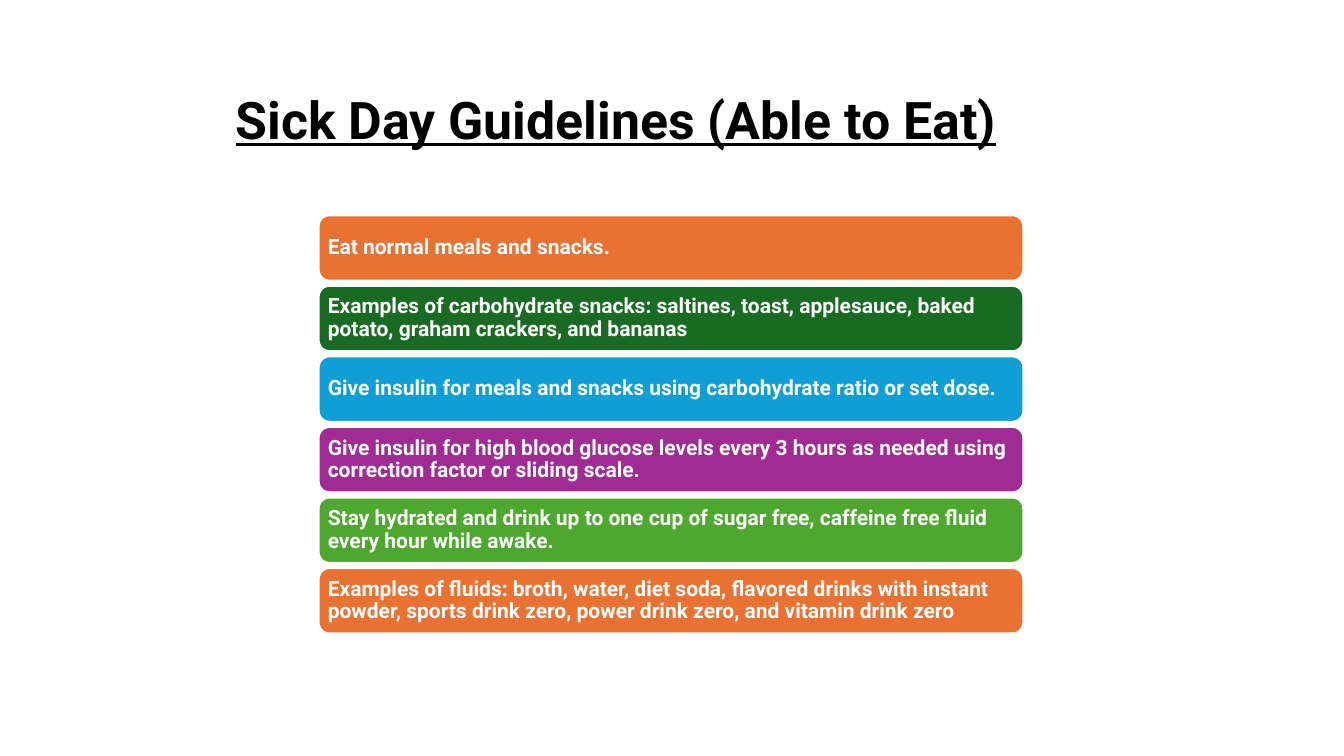
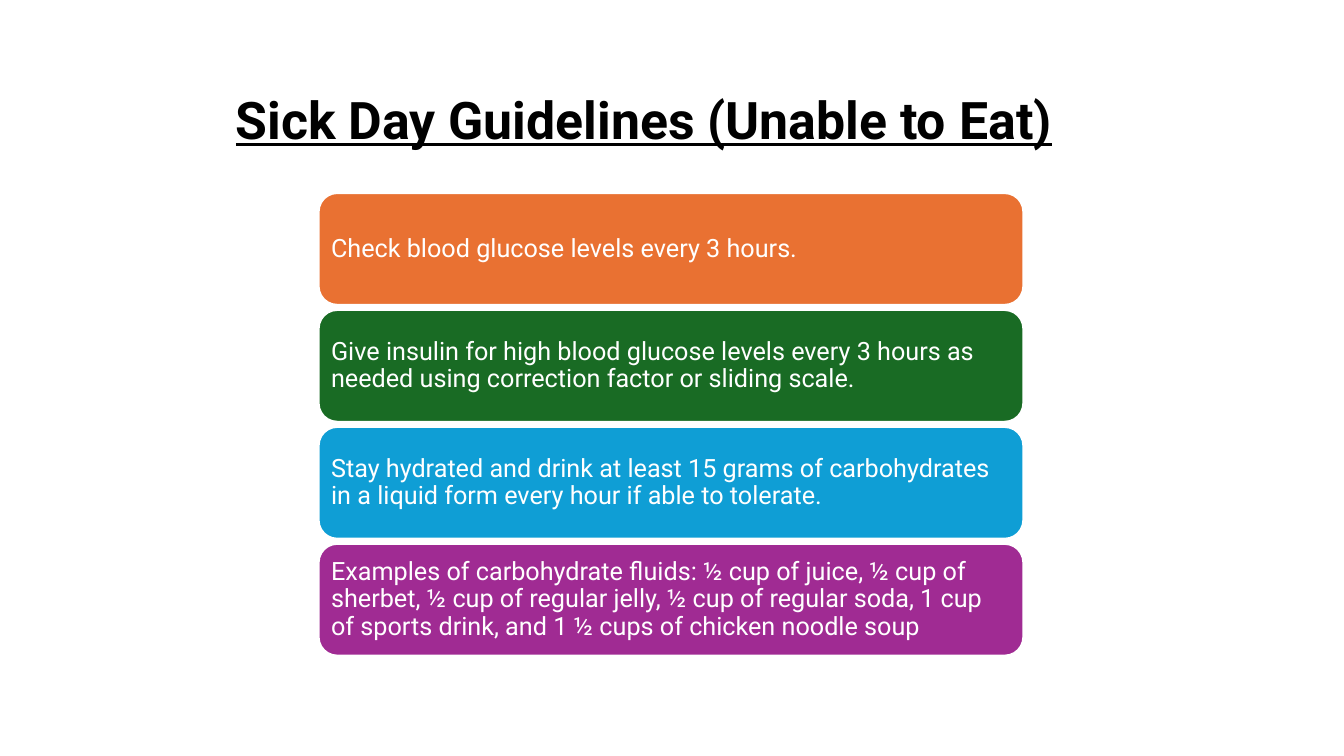
from pptx import Presentation
from pptx.dml.color import RGBColor
from pptx.enum.shapes import MSO_SHAPE
from pptx.enum.text import MSO_ANCHOR, PP_ALIGN
from pptx.util import Inches, Pt

# Shared style
FONT = "Roboto"
BLACK, WHITE = "000000", "FFFFFF"
ACCENTS = ["E97132", "196B24", "0F9ED5", "A02B93", "4EA72E"]
BAR_LEFT, BAR_WIDTH, BAR_GAP = 3.16, 6.99, 0.05
STACK_MIDDLE = 4.21

# Content: title, bar height, text inset, text size, bold, guidelines
SLIDES = [
    ("Sick Day Guidelines (Able to Eat)", 0.65, 0.06, 15, True, [
        "Eat normal meals and snacks.",
        "Examples of carbohydrate snacks: saltines, toast, applesauce, baked "
        "potato, graham crackers, and bananas",
        "Give insulin for meals and snacks using carbohydrate ratio or set dose.",
        "Give insulin for high blood glucose levels every 3 hours as needed using "
        "correction factor or sliding scale.",
        "Stay hydrated and drink up to one cup of sugar free, caffeine free fluid "
        "every hour while awake.",
        "Examples of fluids: broth, water, diet soda, flavored drinks with instant "
        "powder, sports drink zero, power drink zero, and vitamin drink zero",
    ]),
    ("Sick Day Guidelines (Unable to Eat)", 1.11, 0.07, 18, False, [
        "Check blood glucose levels every 3 hours.",
        "Give insulin for high blood glucose levels every 3 hours as needed using "
        "correction factor or sliding scale.",
        "Stay hydrated and drink at least 15 grams of carbohydrates in a liquid "
        "form every hour if able to tolerate.",
        "Examples of carbohydrate fluids: ½ cup of juice, ½ cup of sherbet, "
        "½ cup of regular jelly, ½ cup of regular soda, 1 cup of sports drink, "
        "and 1 ½ cups of chicken noodle soup",
    ]),
]


def color(hex_value):
    return RGBColor.from_string(hex_value)


def write(shape, text, size, hex_value, bold, underline=False):
    frame = shape.text_frame
    frame.word_wrap = True
    frame.vertical_anchor = MSO_ANCHOR.MIDDLE
    frame.text = text
    paragraph = frame.paragraphs[0]
    paragraph.alignment = PP_ALIGN.LEFT
    paragraph.line_spacing = 0.9
    font = paragraph.runs[0].font
    font.name, font.size = FONT, Pt(size)
    font.bold, font.underline = bold, underline
    font.color.rgb = color(hex_value)


prs = Presentation()
prs.slide_width, prs.slide_height = Inches(13.33), Inches(7.5)

for heading, bar_height, inset, size, bold, guidelines in SLIDES:
    slide = prs.slides.add_slide(prs.slide_layouts[6])

    # Title
    title = slide.shapes.add_textbox(
        Inches(2.24), Inches(0.49), Inches(8.9), Inches(1.45))
    write(title, heading, 37, BLACK, True, underline=True)

    # Stack of guideline bars, centred on a common middle
    pitch = bar_height + BAR_GAP
    stack_top = STACK_MIDDLE - (len(guidelines) * pitch - BAR_GAP) / 2
    for row, guideline in enumerate(guidelines):
        bar = slide.shapes.add_shape(
            MSO_SHAPE.ROUNDED_RECTANGLE, Inches(BAR_LEFT),
            Inches(stack_top + row * pitch), Inches(BAR_WIDTH), Inches(bar_height))
        bar.shadow.inherit = False
        bar.fill.solid()
        bar.fill.fore_color.rgb = color(ACCENTS[row % len(ACCENTS)])
        bar.line.color.rgb = color(WHITE)
        bar.line.width = Pt(1.5)
        frame = bar.text_frame
        frame.margin_left = frame.margin_right = Inches(inset)
        frame.margin_top = frame.margin_bottom = Inches(inset)
        write(bar, guideline, size, WHITE, bold)

prs.save("out.pptx")
